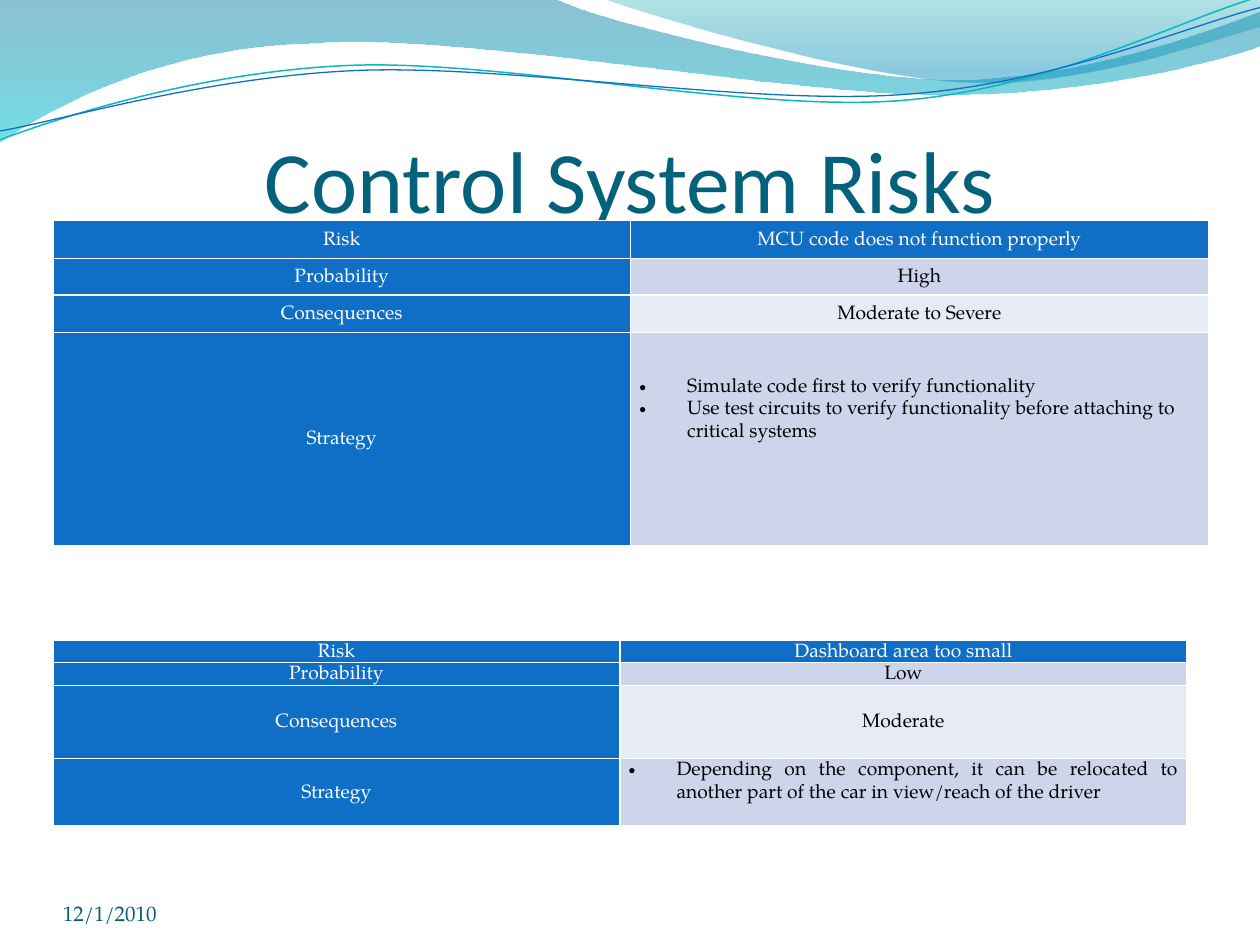
from lxml import etree
from pptx import Presentation
from pptx.dml.color import RGBColor
from pptx.enum.text import MSO_ANCHOR, PP_ALIGN
from pptx.oxml.ns import qn
from pptx.util import Inches, Pt

LEFT, CENTER, JUSTIFY = PP_ALIGN.LEFT, PP_ALIGN.CENTER, PP_ALIGN.JUSTIFY
MIDDLE, BOTTOM = MSO_ANCHOR.MIDDLE, MSO_ANCHOR.BOTTOM
SERIF, SANS = "TeX Gyre Pagella", "Calibri"
COLORS = {
    "title": "04617B", "date": "045D75", "label": "0F6FC6", "odd": "CCD5EA",
    "even": "E7EBF5", "white": "FFFFFF", "black": "000000", "teal": "0AB8BF",
    "deep": "0074A1", "cyan": "00C6CF", "sea": "00A1A9", "sky": "008BBF",
}

TITLE = "Control System Risks"
DATE = "12/1/2010"
RISK_TABLES = [
    {
        "top": 1.75, "width": 9.17, "heights": [0.3, 0.29, 0.3, 1.69],
        "align": LEFT, "space_below": 0.48,
        "rows": [
            ("Risk", ["MCU code does not function properly"]),
            ("Probability", ["High"]),
            ("Consequences", ["Moderate to Severe"]),
            ("Strategy", [
                "Simulate code first to verify functionality",
                "Use test circuits to verify functionality before attaching to critical systems",
            ]),
        ],
    },
    {
        "top": 5.08, "width": 9, "heights": [0.18, 0.18, 0.58, 0.53],
        "align": JUSTIFY, "space_below": 0.18,
        "rows": [
            ("Risk", ["Dashboard area too small"]),
            ("Probability", ["Low"]),
            ("Consequences", ["Moderate"]),
            ("Strategy", [
                "Depending on the component, it can be relocated to another part of the car"
                " in view/reach of the driver",
            ]),
        ],
    },
]

BANDS = [
    ([[(0, 0)], [(4.4, -0.01)],
      [(4.76, 0.17), (6.64, 0.63), (7.58, 0.63)], [(8.53, 0.63), (9.58, 0.26), (10, 0.09)],
      [(10.01, 0.36)],
      [(9.83, 0.44), (8.7, 0.76), (7.46, 0.75)], [(6.22, 0.75), (3.82, 0.28), (2.57, 0.34)],
      [(1.29, 0.36), (0.46, 0.83), (-0.01, 1.13)]],
     [(0, "deep", 45), (1, "cyan", 55)]),
    ([[(4.79, -0.01)],
      [(5.09, 0.11), (6.82, 0.62), (7.69, 0.65)], [(8.56, 0.69), (9.61, 0.32), (10, 0.21)],
      [(10, 0)]],
     [(0, "sea", 30), (0.8, "sky", 45)]),
]
WAVES = [
    ([[(0, 1.11)],
      [(0.48, 0.93), (1.58, 0.57), (2.77, 0.52)], [(3.95, 0.47), (5.93, 0.89), (7.13, 0.8)],
      [(8.33, 0.71), (9.38, 0.15), (9.98, -0.02)]], "teal", 0.85),
    ([[(0, 1.04)],
      [(0.47, 0.96), (1.64, 0.61), (2.83, 0.56)], [(4.03, 0.51), (5.97, 0.84), (7.17, 0.75)],
      [(8.36, 0.67), (9.41, 0.21), (10, 0.06)]], "label", 0.75),
]


def rgb(name):
    return RGBColor.from_string(COLORS[name])


def write(frame, lines, size=11, font=SERIF, color="black", align=CENTER, spacing=1, bullet=False):
    for index, line in enumerate(lines):
        paragraph = frame.paragraphs[0] if index == 0 else frame.add_paragraph()
        paragraph.text = line
        paragraph.alignment = align
        paragraph.line_spacing = spacing
        if bullet:
            properties = paragraph._p.get_or_add_pPr()
            properties.set("marL", str(Inches(0.38)))
            properties.set("indent", str(-Inches(0.38)))
            etree.SubElement(properties, qn("a:buFont"), typeface="Arial")
            etree.SubElement(properties, qn("a:buChar"), char="•")
        paragraph.font.size = Pt(size)
        paragraph.font.name = font
        paragraph.font.color.rgb = rgb(color)


def set_box(frame, anchor, top=0):
    frame.word_wrap = True
    frame.vertical_anchor = anchor
    frame.margin_left = frame.margin_right = frame.margin_bottom = 0
    frame.margin_top = Inches(top)


def add_outline(slide, segments, close):
    start, *rest = [(Inches(x), Inches(y)) for segment in segments for x, y in segment]
    builder = slide.shapes.build_freeform(*start)
    builder.add_line_segments(rest, close=close)
    outline = builder.convert_to_shape()
    outline.shadow.inherit = False
    steps = iter(list(outline._element.iter(qn("a:lnTo"))))
    for segment in segments[1:]:
        first, *others = [next(steps) for _ in segment]
        if others:
            first.tag = qn("a:cubicBezTo")
        for step in others:
            first.append(step[0])
            step.getparent().remove(step)
    return outline


def add_band(slide, segments, stops):
    band = add_outline(slide, segments, True)
    band.line.fill.background()
    band.fill.gradient()
    band.fill.gradient_angle = 270
    for stop, (position, color, _) in zip(band.fill.gradient_stops, stops):
        stop.position = position
        stop.color.rgb = rgb(color)
    tints = band._element.spPr.iter(qn("a:srgbClr"))
    for tint, (_, _, opacity) in zip(tints, stops):
        etree.SubElement(tint, qn("a:alpha"), val=str(opacity * 1000))


def add_wave(slide, segments, color, width):
    wave = add_outline(slide, segments, False)
    wave.fill.background()
    wave.line.color.rgb = rgb(color)
    wave.line.width = Pt(width)


def format_cell(cell, fill):
    cell.vertical_anchor = MIDDLE
    cell.margin_left = cell.margin_right = Inches(0.07)
    cell.margin_top = cell.margin_bottom = 0
    properties = cell._tc.get_or_add_tcPr()
    for side in "LRTB":
        border = etree.SubElement(properties, qn(f"a:ln{side}"), w=str(Pt(1)))
        solid = etree.SubElement(border, qn("a:solidFill"))
        etree.SubElement(solid, qn("a:srgbClr"), val=COLORS["white"])
    cell.fill.solid()
    cell.fill.fore_color.rgb = rgb(fill)


def add_risk_table(slide, risk):
    rows, heights = risk["rows"], risk["heights"]
    table = slide.shapes.add_table(len(rows), 2, Inches(0.42), Inches(risk["top"]),
                                   Inches(risk["width"]), Inches(sum(heights))).table
    for index, (label, details) in enumerate(rows):
        table.rows[index].height = Inches(heights[index])
        header, strategy = index == 0, label == "Strategy"
        detail_fill = "label" if header else "odd" if index % 2 else "even"
        label_cell, detail_cell = table.cell(index, 0), table.cell(index, 1)
        format_cell(label_cell, "label")
        format_cell(detail_cell, detail_fill)
        write(label_cell.text_frame, [label], color="white", spacing=1.15)
        write(detail_cell.text_frame, details, color="white" if header else "black",
              align=risk["align"] if strategy else CENTER, spacing=1.15, bullet=strategy)
        if strategy:
            detail_cell.margin_bottom = Inches(risk["space_below"])


def main():
    deck = Presentation()
    deck.slide_width, deck.slide_height = Inches(10), Inches(7.5)
    slide = deck.slides.add_slide(deck.slide_layouts[5])
    for segments, stops in BANDS:
        add_band(slide, segments, stops)
    for segments, color, width in WAVES:
        add_wave(slide, segments, color, width)

    title = slide.shapes.title
    title.left, title.top, title.width, title.height = map(Inches, (0.5, 0.77, 9, 1.25))
    set_box(title.text_frame, MIDDLE, top=0.05)
    write(title.text_frame, [TITLE], size=50, font=SANS, color="title")
    slide.shapes._spTree.append(title._element)

    for risk in RISK_TABLES:
        add_risk_table(slide, risk)

    date = slide.shapes.add_textbox(*map(Inches, (0.5, 6.95, 2.33, 0.4))).text_frame
    set_box(date, BOTTOM)
    write(date, [DATE], size=12, color="date", align=LEFT)
    deck.save("out.pptx")


if __name__ == "__main__":
    main()
